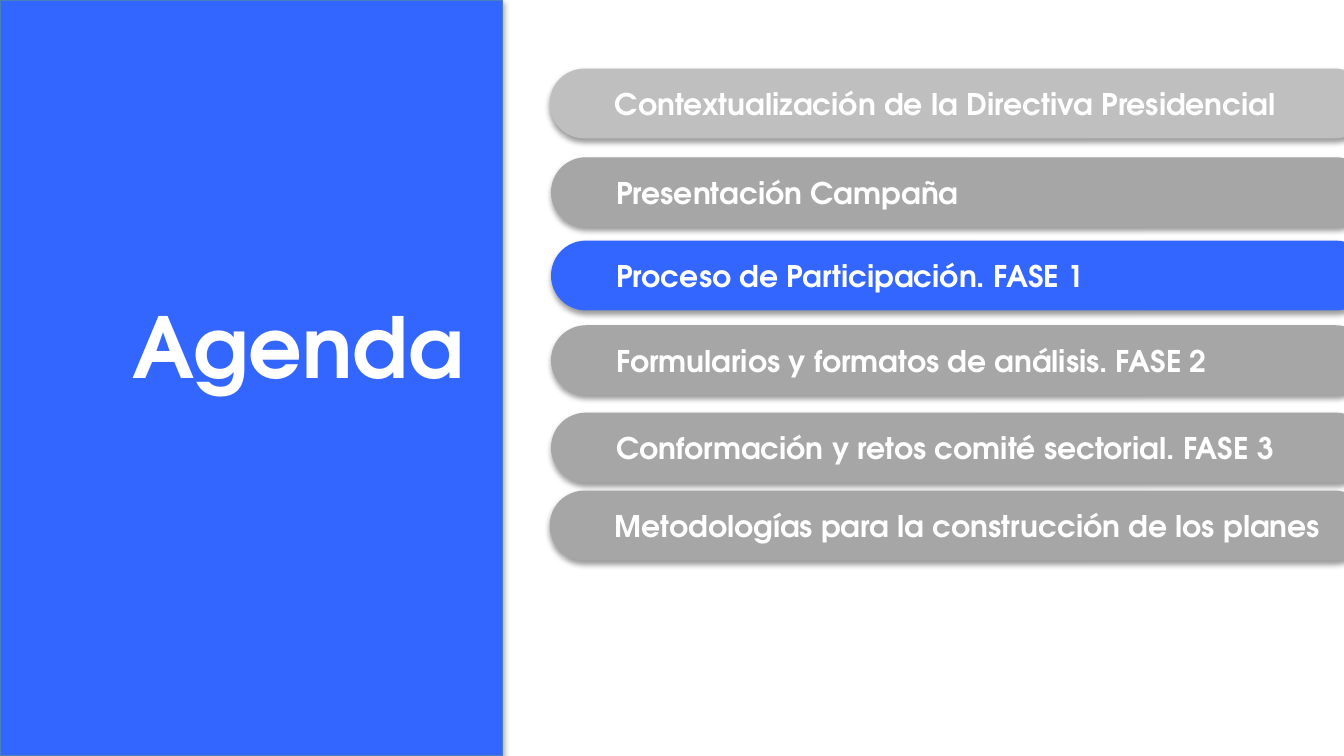
"""Build the agenda slide with the participation phase highlighted."""
from dataclasses import dataclass

from lxml.etree import SubElement
from pptx import Presentation
from pptx.dml.color import RGBColor
from pptx.enum.shapes import MSO_SHAPE
from pptx.enum.text import MSO_ANCHOR, MSO_AUTO_SIZE, PP_ALIGN
from pptx.oxml.ns import qn
from pptx.util import Inches, Pt


@dataclass(frozen=True)
class Theme:
    font: str = "TeX Gyre Adventor"
    active: str = "3366FF"
    pending: str = "A6A6A6"
    done: str = "BFBFBF"
    outline: str = "4B7EBC"
    text: str = "FFFFFF"
    shadow: str = "000000"
    title_size: int = 45
    topic_size: int = 16


theme = Theme()
page_width = 10
page_height = page_width * 9 / 16


def add_run(paragraph, text, size):
    run = paragraph.add_run()
    run.text = text
    run.font.name = theme.font
    run.font.size = Pt(size)
    run.font.bold = True
    run.font.color.rgb = RGBColor.from_string(theme.text)


def add_block(kind, left, top, width, height, color, distance, opacity):
    block = slide.shapes.add_shape(
        kind, Inches(left), Inches(top), Inches(width), Inches(height))
    block.fill.solid()
    block.fill.fore_color.rgb = RGBColor.from_string(color)
    block.line.fill.background()
    block.shadow.inherit = False
    effects = block._element.spPr.find(qn("a:effectLst"))
    shadow = SubElement(
        effects, qn("a:outerShdw"), blurRad=str(Pt(3.1)), dist=str(Pt(distance)),
        dir="5400000", rotWithShape="0")
    shade = SubElement(shadow, qn("a:srgbClr"), val=theme.shadow)
    SubElement(shade, qn("a:alpha"), val=str(opacity * 1000))
    return block


presentation = Presentation()
presentation.slide_width = Inches(page_width)
presentation.slide_height = Inches(page_height)
slide = presentation.slides.add_slide(presentation.slide_layouts[5])

panel = add_block(
    MSO_SHAPE.RECTANGLE, 0, 0, 3.74, page_height, theme.active, 1.8, 35)
panel.line.color.rgb = RGBColor.from_string(theme.outline)
panel.line.width = Pt(0.75)

heading = slide.shapes.title
slide.shapes._spTree.append(heading._element)
heading.left, heading.top = Inches(-0.35), Inches(2.14)
heading.width, heading.height = Inches(3.9), Inches(0.86)
heading.text_frame.word_wrap = True
heading.text_frame.auto_size = MSO_AUTO_SIZE.SHAPE_TO_FIT_TEXT
heading.text_frame.vertical_anchor = MSO_ANCHOR.TOP
heading_line = heading.text_frame.paragraphs[0]
heading_line.alignment = PP_ALIGN.RIGHT
add_run(heading_line, "Agenda", theme.title_size)

topics = [
    ("Contextualización de la Directiva Presidencial", 4.09, 0.51, theme.done),
    ("Presentación Campaña", 4.1, 1.17, theme.pending),
    ("Proceso de Participación. FASE 1", 4.1, 1.79, theme.active),
    ("Formularios y formatos de análisis. FASE 2", 4.1, 2.42, theme.pending),
    ("Conformación y retos comité sectorial. FASE 3", 4.1, 3.07, theme.pending),
    ("Metodologías para la construcción de los planes", 4.09, 3.65, theme.pending),
]
for topic, left, top, color in topics:
    bar = add_block(
        MSO_SHAPE.ROUNDED_RECTANGLE, left, top, 6.1, 0.52, color, 1.6, 38)
    bar.adjustments[0] = 0.5
    frame = bar.text_frame
    frame.word_wrap = True
    frame.auto_size = MSO_AUTO_SIZE.SHAPE_TO_FIT_TEXT
    frame.vertical_anchor = MSO_ANCHOR.MIDDLE
    frame.margin_left = Inches(0.41)
    frame.paragraphs[0].alignment = PP_ALIGN.LEFT
    add_run(frame.paragraphs[0], topic, theme.topic_size)

presentation.save("out.pptx")
